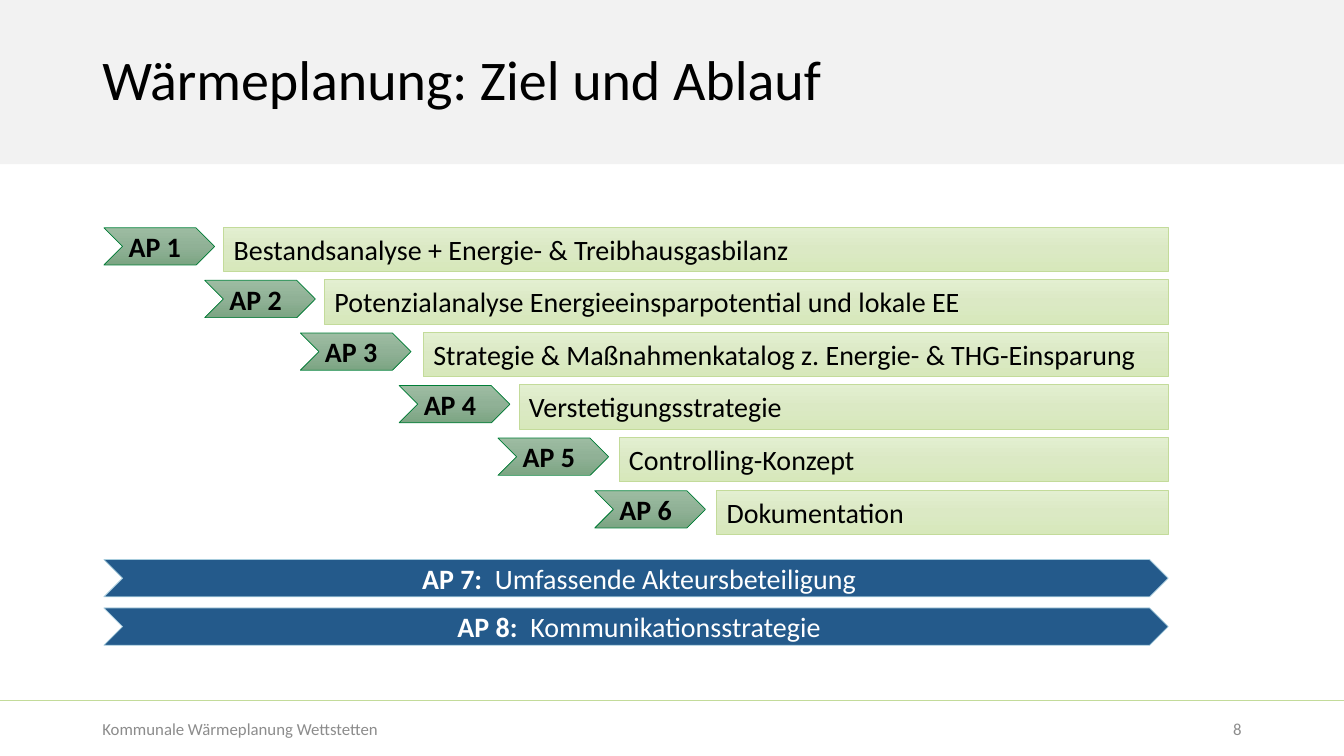
from copy import deepcopy
from dataclasses import dataclass

from lxml import etree
from pptx import Presentation
from pptx.dml.color import RGBColor
from pptx.enum import shapes, text
from pptx.oxml import ns
from pptx.util import Cm, Pt


@dataclass(frozen=True)
class Theme:
    """Colours, type sizes and font of the slide."""
    font: str = "Calibri"
    title_size: float = 40
    body_size: float = 20
    footer_size: float = 12
    hairline: float = 0.5
    black: str = "000000"
    white: str = "FFFFFF"
    grey: str = "8C8C8C"
    band: str = "F2F2F2"
    blue: str = "245A8B"
    blue_line: str = "A7CCDD"
    tag_fill: tuple[str, ...] = ("9DBCA2", "90B196", "7CA583")
    tag_line: str = "007E37"
    bar_fill: tuple[str, ...] = ("E3EFD1", "DBE9C4", "D7E8BB")
    bar_line: str = "C3DB9A"


@dataclass(frozen=True)
class Box:
    """Position and size in centimetres."""
    left: float
    top: float
    width: float
    height: float

    def lengths(self) -> list[int]:
        """Return the four values as lengths."""
        return [Cm(v) for v in (self.left, self.top, self.width, self.height)]


@dataclass(frozen=True)
class Step:
    """Work package with its tag and its bar."""
    tag: str
    label: str
    tag_left: float
    bar_left: float


@dataclass(frozen=True)
class Strand:
    """Work package that runs along the whole project."""
    tag: str
    label: str


THEME = Theme()
WIDTH, HEIGHT = 33.87, 19.05
LEFT, RIGHT = 2.62, 29.44
STEP_TOP, STEP_PITCH = 5.72, 1.325
STRAND_TOP, STRAND_PITCH = 14.1, 1.22
TAG_WIDTH, TAG_HEIGHT, BAR_HEIGHT = 2.79, 0.94, 1.12
TAG_DROP = 0.02
TAG_INSETS = (0.15, 0.05, 0.05, 0.05)
STRAND_INSETS = (0.23, 0.08, 0.08, 0.08)
DEFAULT_INSETS = (0.25, 0.13, 0.25, 0.13)
SHAPE, ANCHOR, ALIGN = shapes.MSO_SHAPE, text.MSO_ANCHOR, text.PP_ALIGN

STEPS = (
    Step("AP 1", "Bestandsanalyse + Energie- & Treibhausgasbilanz", LEFT, 5.64),
    Step("AP 2", "Potenzialanalyse Energieeinsparpotential und lokale EE", 5.16, 8.18),
    Step("AP 3", "Strategie & Maßnahmenkatalog z. Energie- & THG-Einsparung", 7.57, 10.67),
    Step("AP 4", "Verstetigungsstrategie", 10.06, 13.08),
    Step("AP 5", "Controlling-Konzept", 12.55, 15.6),
    Step("AP 6", "Dokumentation", 14.99, 18.06),
)
STRANDS = (
    Strand("AP 7:", "  Umfassende Akteursbeteiligung"),
    Strand("AP 8:", "  Kommunikationsstrategie"),
)


def write(sp, *parts: tuple[str, bool], size: float = THEME.body_size,
          color: str = THEME.black, align=ALIGN.LEFT, anchor=ANCHOR.MIDDLE,
          insets: tuple[float, ...] = DEFAULT_INSETS, spacing: float = 1.0) -> None:
    """Write one paragraph of (text, bold) parts into a shape."""
    tf = sp.text_frame
    tf.word_wrap = True
    tf.vertical_anchor = anchor
    tf.margin_left, tf.margin_top, tf.margin_right, tf.margin_bottom = map(Cm, insets)
    p = tf.paragraphs[0]
    p.alignment, p.line_spacing = align, spacing
    for content, bold in parts:
        r = p.add_run()
        r.text = content
        r.font.name, r.font.size, r.font.bold = THEME.font, Pt(size), bold
        r.font.color.rgb = RGBColor.from_string(color)


def add_box(s, kind, box: Box, fills: tuple[str, ...], line: str | None = None):
    """Add a shape with a solid fill or an even top-to-bottom gradient."""
    sp = s.shapes.add_shape(kind, *box.lengths())
    sp.shadow.inherit = False
    if len(fills) == 1:
        sp.fill.solid()
        sp.fill.fore_color.rgb = RGBColor.from_string(fills[0])
    else:
        sp.fill.gradient()
        sp.fill.gradient_angle = 270
        first = sp.fill._fill._gradFill.find(ns.qn("a:gsLst"))[0]
        for _ in fills[2:]:
            first.addnext(deepcopy(first))
        for i, (stop, color) in enumerate(zip(sp.fill.gradient_stops, fills)):
            stop.position = i / (len(fills) - 1)
            stop.color.rgb = RGBColor.from_string(color)
    if line is None:
        sp.line.fill.background()
    else:
        sp.line.color.rgb = RGBColor.from_string(line)
        sp.line.width = Pt(THEME.hairline)
    return sp


def add_frame(s) -> None:
    """Add the title band, the footer rule and their texts."""
    add_box(s, SHAPE.RECTANGLE, Box(0, 0, WIDTH, 4.14), (THEME.band,))
    rule = s.shapes.add_connector(shapes.MSO_CONNECTOR.STRAIGHT,
                                  Cm(0), Cm(17.65), Cm(WIDTH), Cm(17.65))
    rule.line.color.rgb = RGBColor.from_string(THEME.bar_line)
    rule.line.width = Pt(THEME.hairline)
    etree.SubElement(rule._element.spPr, ns.qn("a:effectLst"))
    title = s.shapes.add_textbox(*Box(2.33, 0.23, 29.21, 3.68).lengths())
    write(title, ("Wärmeplanung: Ziel und Ablauf", False),
          size=THEME.title_size, spacing=0.9)
    for content, box, align in (
        ("Kommunale Wärmeplanung Wettstetten", Box(2.33, 17.86, 20.32, 1.02), ALIGN.LEFT),
        ("8", Box(29.23, 17.86, 2.31, 1.02), ALIGN.RIGHT),
    ):
        write(s.shapes.add_textbox(*box.lengths()), (content, False),
              size=THEME.footer_size, color=THEME.grey, align=align)


def add_step(s, step: Step, top: float) -> None:
    """Add the tag and the bar of one step."""
    tag = add_box(s, SHAPE.CHEVRON,
                  Box(step.tag_left, top + TAG_DROP, TAG_WIDTH, TAG_HEIGHT),
                  THEME.tag_fill, THEME.tag_line)
    write(tag, (step.tag, True), insets=TAG_INSETS)
    bar = add_box(s, SHAPE.RECTANGLE,
                  Box(step.bar_left, top, RIGHT - step.bar_left, BAR_HEIGHT),
                  THEME.bar_fill, THEME.bar_line)
    write(bar, (step.label, False), anchor=ANCHOR.TOP)


def add_strand(s, strand: Strand, top: float) -> None:
    """Add one full-width strand."""
    sp = add_box(s, SHAPE.CHEVRON, Box(LEFT, top, RIGHT - LEFT, TAG_HEIGHT),
                 (THEME.blue,), THEME.blue_line)
    write(sp, (strand.tag, True), (strand.label, False), color=THEME.white,
          align=ALIGN.CENTER, insets=STRAND_INSETS)


def main() -> None:
    """Build and save the slide."""
    prs = Presentation()
    prs.slide_width, prs.slide_height = Cm(WIDTH), Cm(HEIGHT)
    s = prs.slides.add_slide(prs.slide_layouts[6])
    add_frame(s)
    for i, step in enumerate(STEPS):
        add_step(s, step, STEP_TOP + i * STEP_PITCH)
    for i, strand in enumerate(STRANDS):
        add_strand(s, strand, STRAND_TOP + i * STRAND_PITCH)
    prs.save("out.pptx")


if __name__ == "__main__":
    main()
